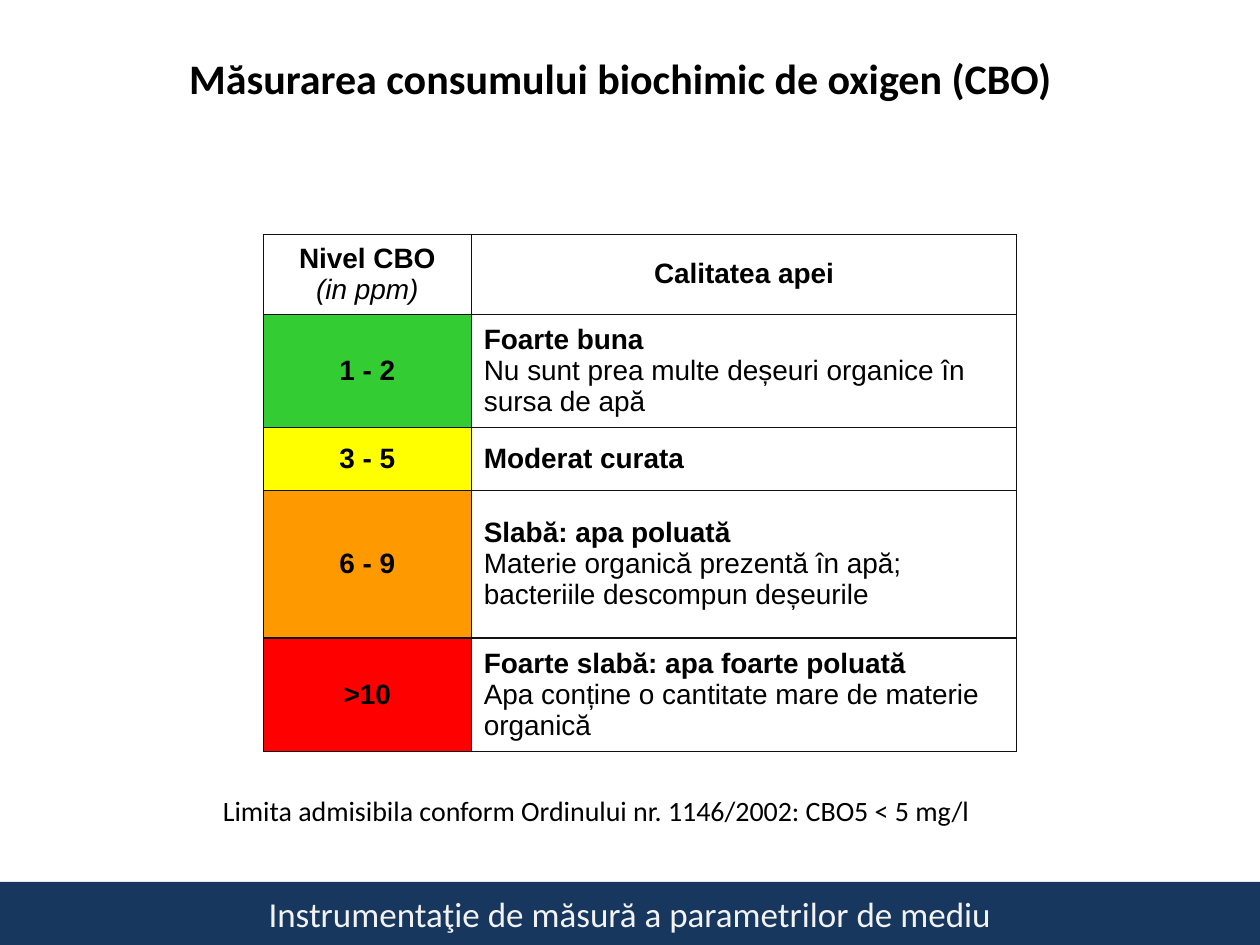
"""Builds a slide on water quality by biochemical oxygen demand."""
from dataclasses import dataclass

from lxml import etree
from pptx import Presentation
from pptx import util as u
from pptx.dml import color
from pptx.enum import shapes, text
from pptx.oxml import ns


@dataclass(frozen=True)
class Theme:
    """Colours, fonts and type sizes of the slide."""
    ink: str = "000000"
    paper: str = "FFFFFF"
    border: str = "111111"
    band: str = "17375E"
    band_ink: str = "F2F2F2"
    font: str = "Calibri"
    table_font: str = "Arial"
    title_size: int = 24
    body_size: int = 16
    band_size: int = 20
    border_width: float = 0.75


THEME = Theme()
HEADINGS = (["Nivel CBO", "(in ppm)"], ["Calitatea apei"])
LEVELS = [
    ("1 - 2", "33CC33", ["Foarte buna", "Nu sunt prea multe deșeuri organice în sursa de apă"]),
    ("3 - 5", "FFFF00", ["Moderat curata"]),
    ("6 - 9", "FF9900", ["Slabă: apa poluată", "Materie organică prezentă în apă; bacteriile descompun deșeurile"]),
    (">10", "FF0000", ["Foarte slabă: apa foarte poluată", "Apa conține o cantitate mare de materie organică"]),
]
COLUMN_WIDTHS = (1.65, 4.33)
ROW_HEIGHTS = (0.63, 0.9, 0.5, 1.17, 0.9)


def rgb(value):
    """Return a colour from its hex value."""
    return color.RGBColor.from_string(value)


def format_paragraph(paragraph, size, font=THEME.font, ink=THEME.ink, bold=False, italic=False, centred=False):
    """Format a paragraph and its runs."""
    paragraph.alignment = text.PP_ALIGN.CENTER if centred else text.PP_ALIGN.LEFT
    for run in paragraph.runs:
        run.font.size, run.font.name = u.Pt(size), font
        run.font.bold, run.font.italic = bold, italic
        run.font.color.rgb = rgb(ink)


def add_label(slide, box, wording, size, **style):
    """Place one line of text in the given box."""
    label = slide.shapes.add_textbox(*map(u.Inches, box))
    label.text_frame.word_wrap = True
    label.text_frame.text = wording
    format_paragraph(label.text_frame.paragraphs[0], size, **style)


def add_borders(cell):
    """Draw a thin line on each side of a cell."""
    properties = cell._tc.get_or_add_tcPr()
    for side in ("a:lnL", "a:lnR", "a:lnT", "a:lnB"):
        line = etree.SubElement(properties, ns.qn(side), w=str(u.Pt(THEME.border_width)))
        fill = etree.SubElement(line, ns.qn("a:solidFill"))
        etree.SubElement(fill, ns.qn("a:srgbClr"), val=THEME.border)


def fill_cell(cell, lines, fill=THEME.paper, centred=False, italic_detail=False):
    """Write a bold first line and plain details into a cell."""
    add_borders(cell)
    cell.fill.solid()
    cell.fill.fore_color.rgb = rgb(fill)
    cell.vertical_anchor = text.MSO_ANCHOR.MIDDLE
    cell.text_frame.text = "\n".join(lines)
    for index, paragraph in enumerate(cell.text_frame.paragraphs):
        format_paragraph(paragraph, THEME.body_size, THEME.table_font, bold=index == 0,
                         italic=italic_detail and index > 0, centred=centred)


def add_quality_table(slide, left, top):
    """Place the table of oxygen demand levels and water quality."""
    table = slide.shapes.add_table(
        len(ROW_HEIGHTS), len(COLUMN_WIDTHS), u.Inches(left), u.Inches(top),
        u.Inches(sum(COLUMN_WIDTHS)), u.Inches(sum(ROW_HEIGHTS))).table
    table.first_row = table.horz_banding = False
    for column, width in zip(table.columns, COLUMN_WIDTHS):
        column.width = u.Inches(width)
    for row, height in zip(table.rows, ROW_HEIGHTS):
        row.height = u.Inches(height)
    for column, heading in enumerate(HEADINGS):
        fill_cell(table.cell(0, column), heading, centred=True, italic_detail=True)
    for row, (level, fill, quality) in enumerate(LEVELS, start=1):
        fill_cell(table.cell(row, 0), [level], fill, centred=True)
        fill_cell(table.cell(row, 1), quality)


def add_footer(slide, box, wording):
    """Place the course band in the given box."""
    band = slide.shapes.add_shape(shapes.MSO_SHAPE.RECTANGLE, *map(u.Inches, box))
    band.shadow.inherit = False
    band.fill.solid()
    band.fill.fore_color.rgb = rgb(THEME.band)
    band.line.fill.background()
    band.text_frame.text = wording
    band.text_frame.vertical_anchor = text.MSO_ANCHOR.MIDDLE
    format_paragraph(band.text_frame.paragraphs[0], THEME.band_size, ink=THEME.band_ink, centred=True)


def main():
    """Build and save the slide."""
    deck = Presentation()
    deck.slide_width, deck.slide_height = u.Inches(10), u.Inches(7.5)
    slide = deck.slides.add_slide(deck.slide_layouts[6])
    add_label(slide, (0.67, 0.37, 8.51, 0.51), "Măsurarea consumului biochimic de oxigen (CBO)",
              THEME.title_size, bold=True, centred=True)
    add_quality_table(slide, 2.09, 1.86)
    add_label(slide, (1.67, 6.25, 7.42, 0.37),
              "Limita admisibila conform Ordinului nr. 1146/2002: CBO5 < 5 mg/l", THEME.body_size)
    add_footer(slide, (0, 7, 10, 0.5), "Instrumentaţie de măsură a parametrilor de mediu")
    deck.save("out.pptx")


if __name__ == "__main__":
    main()
